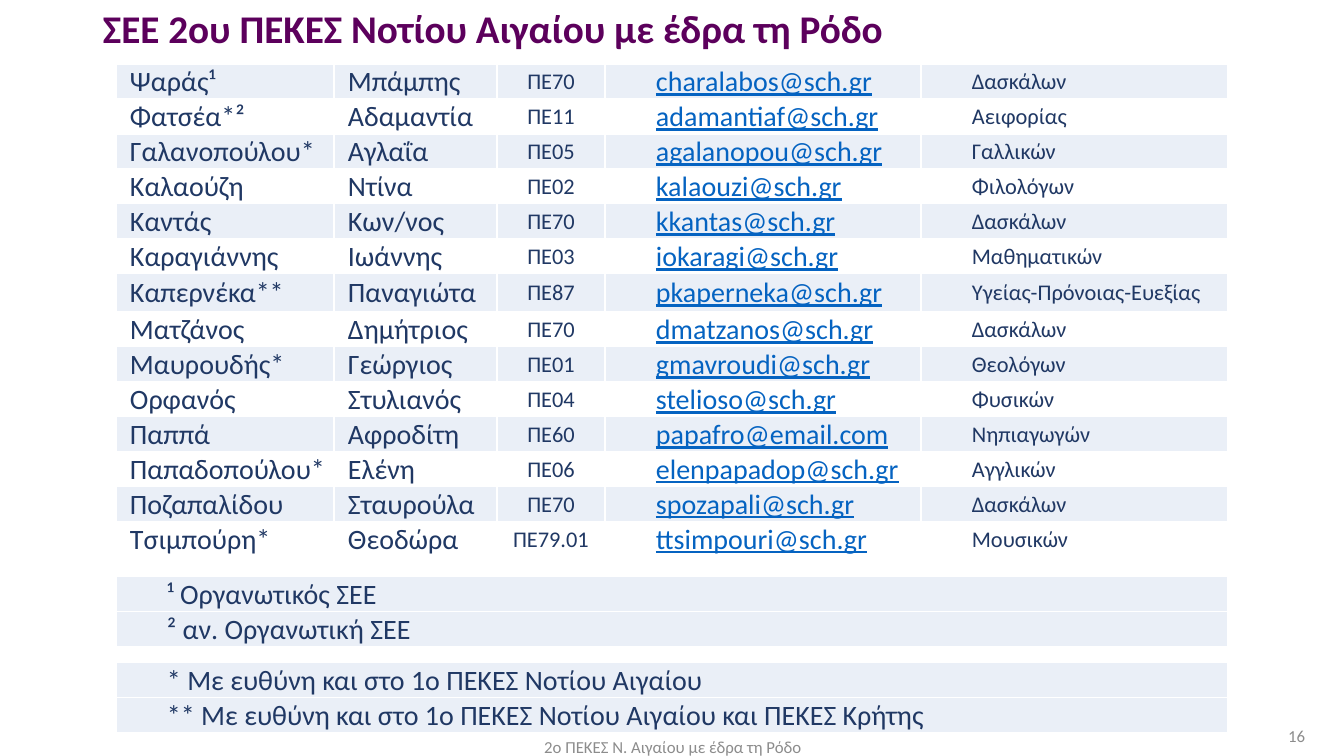
"""Build the slide listing the education coordinators of the 2nd regional centre."""
from lxml.etree import SubElement
from pptx import Presentation
from pptx.dml.color import RGBColor
from pptx.enum.text import MSO_ANCHOR as Anchor, PP_ALIGN as Align
from pptx.oxml.ns import qn
from pptx.util import Pt

SCALE = 12192000 / 1344
PURPLE = RGBColor(0x5C, 0x00, 0x5C)
NAVY = RGBColor(0x20, 0x38, 0x64)
LINK_BLUE = RGBColor(0x05, 0x63, 0xC1)
GREY = RGBColor(0x8C, 0x8C, 0x8C)
BAND = RGBColor(0xEA, 0xEF, 0xF7)
WHITE = RGBColor(0xFF, 0xFF, 0xFF)

TITLE = {"size": Pt(28), "bold": True}
LARGE = {"size": Pt(20)}
LINK = {"size": Pt(20), "underline": True}
SMALL = {"size": Pt(16)}
FOOTER = {"size": Pt(12)}

COLUMN_WIDTHS = [218, 163, 108, 316, 307]
COLUMN_STYLES = [
    (14, Align.LEFT, LARGE, NAVY),
    (14, Align.LEFT, LARGE, NAVY),
    (1, Align.CENTER, SMALL, NAVY),
    (51, Align.LEFT, LINK, LINK_BLUE),
    (51, Align.LEFT, SMALL, NAVY),
]
ROW_HEIGHT = 35
TALL_ROWS = {"Καπερνέκα**": 38}

COORDINATORS = [
    ("Ψαράς¹", "Μπάμπης", "ΠΕ70", "charalabos@sch.gr", "Δασκάλων"),
    ("Φατσέα*²", "Αδαμαντία", "ΠΕ11", "adamantiaf@sch.gr", "Αειφορίας"),
    ("Γαλανοπούλου*", "Αγλαΐα", "ΠΕ05", "agalanopou@sch.gr", "Γαλλικών"),
    ("Καλαούζη", "Ντίνα", "ΠΕ02", "kalaouzi@sch.gr", "Φιλολόγων"),
    ("Καντάς", "Κων/νος", "ΠΕ70", "kkantas@sch.gr", "Δασκάλων"),
    ("Καραγιάννης", "Ιωάννης", "ΠΕ03", "iokaragi@sch.gr", "Μαθηματικών"),
    ("Καπερνέκα**", "Παναγιώτα", "ΠΕ87", "pkaperneka@sch.gr", "Υγείας-Πρόνοιας-Ευεξίας"),
    ("Ματζάνος", "Δημήτριος", "ΠΕ70", "dmatzanos@sch.gr", "Δασκάλων"),
    ("Μαυρουδής*", "Γεώργιος", "ΠΕ01", "gmavroudi@sch.gr", "Θεολόγων"),
    ("Ορφανός", "Στυλιανός", "ΠΕ04", "stelioso@sch.gr", "Φυσικών"),
    ("Παππά", "Αφροδίτη", "ΠΕ60", "papafro@email.com", "Νηπιαγωγών"),
    ("Παπαδοπούλου*", "Ελένη", "ΠΕ06", "elenpapadop@sch.gr", "Αγγλικών"),
    ("Ποζαπαλίδου", "Σταυρούλα", "ΠΕ70", "spozapali@sch.gr", "Δασκάλων"),
    ("Τσιμπούρη*", "Θεοδώρα", "ΠΕ79.01", "ttsimpouri@sch.gr", "Μουσικών"),
]
FOOTNOTES = [
    ("", 20),
    ("¹ Οργανωτικός ΣΕΕ", ROW_HEIGHT),
    ("² αν. Οργανωτική ΣΕΕ", ROW_HEIGHT),
    ("", 16),
    ("* Με ευθύνη και στο 1ο ΠΕΚΕΣ Νοτίου Αιγαίου", ROW_HEIGHT),
    ("** Με ευθύνη και στο 1ο ΠΕΚΕΣ Νοτίου Αιγαίου και ΠΕΚΕΣ Κρήτης", ROW_HEIGHT),
]


def px(length):
    return round(length * SCALE)


def apply(target, values):
    for attribute, value in values.items():
        setattr(target, attribute, value)


def write(paragraph, text, align, style, color):
    paragraph.alignment = align
    run = paragraph.add_run()
    run.text = text
    apply(run.font, {"name": "Calibri", **style})
    run.font.color.rgb = color


def add_label(slide, box, text, align, style, color, spacing=1.0):
    label = slide.shapes.add_textbox(*map(px, box))
    apply(label.text_frame, {"word_wrap": True, "vertical_anchor": Anchor.MIDDLE})
    paragraph = label.text_frame.paragraphs[0]
    paragraph.line_spacing = spacing
    write(paragraph, text, align, style, color)


def add_borders(cell):
    properties = cell._tc.get_or_add_tcPr()
    for side in ("lnL", "lnR", "lnT", "lnB"):
        line = SubElement(properties, qn(f"a:{side}"), w=str(Pt(1)))
        solid = SubElement(line, qn("a:solidFill"))
        SubElement(solid, qn("a:srgbClr"), val=str(WHITE))


def format_cell(cell, banded, left):
    apply(cell, {"vertical_anchor": Anchor.MIDDLE, "margin_left": px(left),
                 "margin_right": px(1), "margin_top": px(1), "margin_bottom": 0})
    add_borders(cell)
    if banded:
        cell.fill.solid()
        cell.fill.fore_color.rgb = BAND
    else:
        cell.fill.background()


def add_coordinator(table, index, person):
    table.rows[index].height = px(TALL_ROWS.get(person[0], ROW_HEIGHT))
    for column, (text, (left, align, style, color)) in enumerate(zip(person, COLUMN_STYLES)):
        cell = table.cell(index, column)
        format_cell(cell, index % 2 == 0, left)
        write(cell.text_frame.paragraphs[0], text, align, style, color)


def add_footnote(table, index, note, height):
    table.rows[index].height = px(height)
    for column in range(len(COLUMN_WIDTHS)):
        cell = table.cell(index, column)
        format_cell(cell, bool(note), 51)
        SubElement(cell.text_frame.paragraphs[0]._p, qn("a:endParaRPr"), sz="800")
    first = table.cell(index, 0)
    first.merge(table.cell(index, len(COLUMN_WIDTHS) - 1))
    if note:
        write(first.text_frame.paragraphs[0], note, Align.LEFT, LARGE, NAVY)


def add_directory(slide):
    row_count = len(COORDINATORS) + len(FOOTNOTES)
    frame = slide.shapes.add_table(row_count, len(COLUMN_WIDTHS), px(116), px(64),
                                   px(sum(COLUMN_WIDTHS)), px(row_count * ROW_HEIGHT))
    table = frame.table
    apply(table, {"first_row": False, "horz_banding": False})
    for column, width in zip(table.columns, COLUMN_WIDTHS):
        column.width = px(width)
    for index, person in enumerate(COORDINATORS):
        add_coordinator(table, index, person)
    for index, (note, height) in enumerate(FOOTNOTES, len(COORDINATORS)):
        add_footnote(table, index, note, height)


def main():
    deck = Presentation()
    apply(deck, {"slide_width": px(1344), "slide_height": px(756)})
    slide = deck.slides.add_slide(deck.slide_layouts[6])
    add_label(slide, (93, 0, 1159, 62), "ΣΕE 2ου ΠΕΚΕΣ Νοτίου Αιγαίου με έδρα τη Ρόδο",
              Align.LEFT, TITLE, PURPLE, 0.9)
    add_directory(slide)
    add_label(slide, (446, 727, 454, 40), "2ο ΠΕΚΕΣ Ν. Αιγαίου με έδρα τη Ρόδο",
              Align.CENTER, FOOTER, GREY)
    add_label(slide, (1013, 716, 302, 40), "16", Align.RIGHT, FOOTER, GREY)
    deck.save("out.pptx")


if __name__ == "__main__":
    main()
